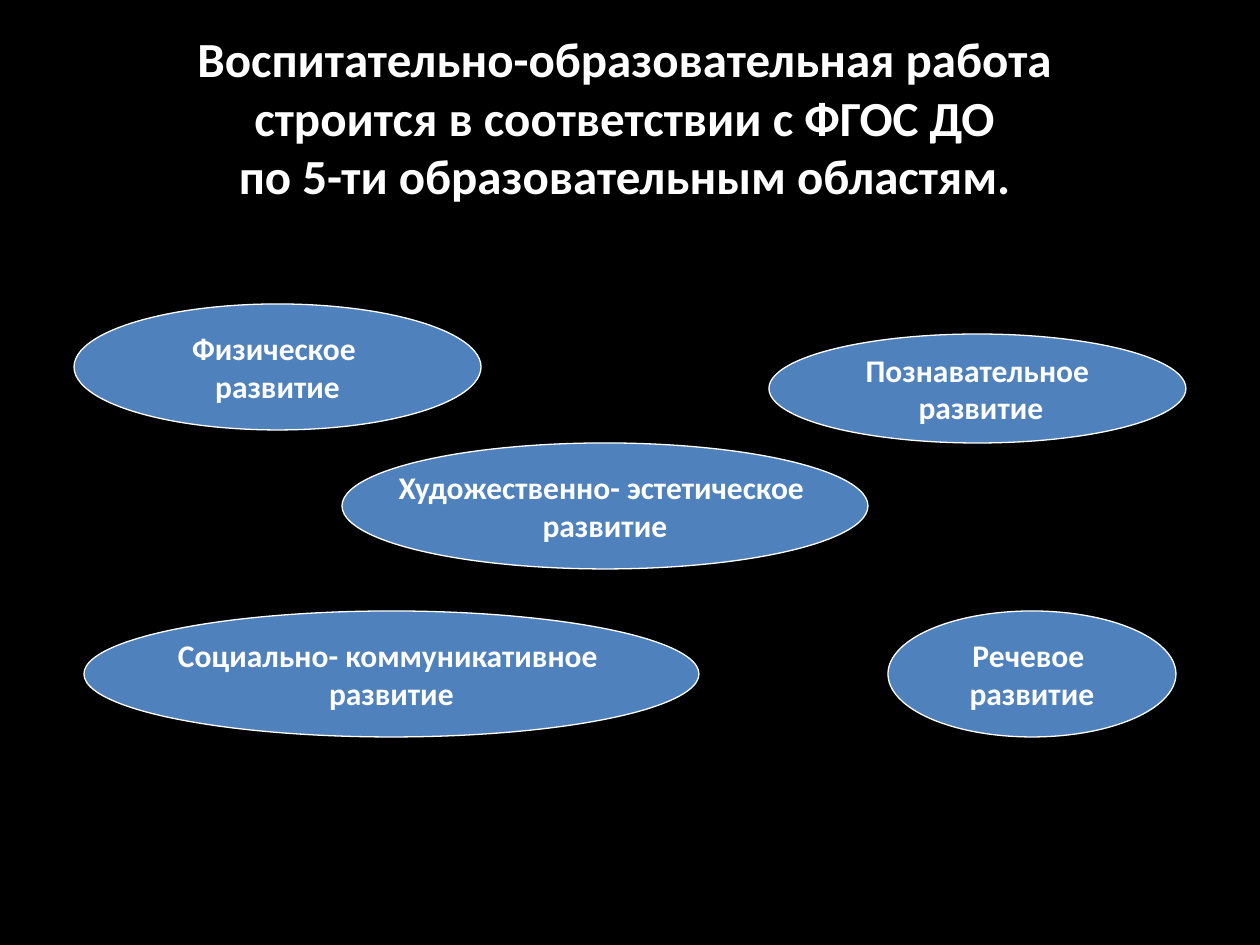
from dataclasses import dataclass

from pptx import Presentation
from pptx.dml.color import RGBColor
from pptx.enum.shapes import MSO_SHAPE
from pptx.enum.text import MSO_ANCHOR, PP_ALIGN
from pptx.util import Pt

PX = 914400 / 126  # EMU per pixel


@dataclass(frozen=True)
class Theme:
    font: str = "Calibri"
    background: RGBColor = RGBColor(0x00, 0x00, 0x00)
    text: RGBColor = RGBColor(0xFF, 0xFF, 0xFF)
    fill: RGBColor = RGBColor(0x4F, 0x81, 0xBD)
    outline: RGBColor = RGBColor(0xFF, 0xFF, 0xFF)
    outline_width: float = 0.75
    title_size: int = 28
    label_size: int = 18


def emu(*lengths):
    return [round(n * PX) for n in lengths]


class SlideBuilder:
    def __init__(self, prs, theme):
        self.theme = theme
        self.s = prs.slides.add_slide(prs.slide_layouts[6])
        bg = self.s.background.fill
        bg.solid()
        bg.fore_color.rgb = theme.background

    def set_text(self, sp, text, size, wrap):
        tf = sp.text_frame
        tf.text = text
        tf.word_wrap = wrap
        tf.vertical_anchor = MSO_ANCHOR.MIDDLE
        for p in tf.paragraphs:
            p.alignment = PP_ALIGN.CENTER
            for r in p.runs:
                r.font.name = self.theme.font
                r.font.size = Pt(size)
                r.font.bold = True
                r.font.color.rgb = self.theme.text

    def title(self, text, *box):
        sp = self.s.shapes.add_textbox(*emu(*box))
        self.set_text(sp, text, self.theme.title_size, True)

    def ellipse(self, text, *box):
        sp = self.s.shapes.add_shape(MSO_SHAPE.OVAL, *emu(*box))
        sp.shadow.inherit = False
        sp.fill.solid()
        sp.fill.fore_color.rgb = self.theme.fill
        sp.line.color.rgb = self.theme.outline
        sp.line.width = Pt(self.theme.outline_width)
        self.set_text(sp, text, self.theme.label_size, False)


# Educational areas: label, left, top, width, height
AREAS = [
    ("Физическое \nразвитие", 74, 304, 407, 126),
    ("Познавательное\n развитие", 769, 334, 417, 109),
    ("Социально- коммуникативное \nразвитие", 84, 611, 615, 126),
    ("Речевое \nразвитие", 888, 611, 288, 126),
    ("Художественно- эстетическое \nразвитие", 342, 443, 526, 126),
]


def main():
    prs = Presentation()
    prs.slide_width, prs.slide_height = emu(1260, 945)
    slide = SlideBuilder(prs, Theme())

    # Heading, one paragraph with line breaks
    slide.title(
        "Воспитательно-образовательная работа \v"
        "строится в соответствии с ФГОС ДО \v"
        "по 5-ти образовательным областям. ",
        63, 38, 1134, 157,
    )

    # The five areas
    for label, *box in AREAS:
        slide.ellipse(label, *box)

    prs.save("out.pptx")


if __name__ == "__main__":
    main()
